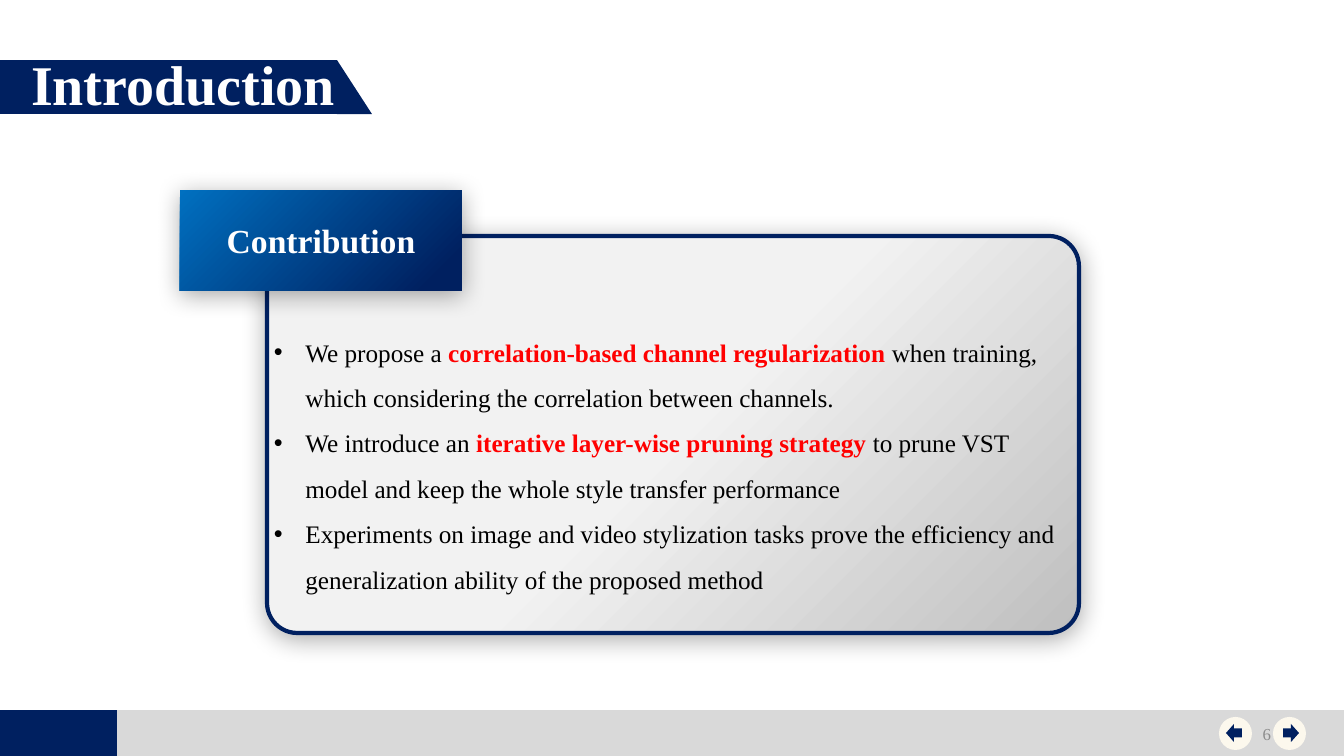
import pptx
import pptx.util
import pptx.dml.color
import pptx.enum.shapes
import pptx.enum.text
import pptx.oxml
import pptx.oxml.ns

COLORS = {"navy": "002060", "blue": "0070C0", "gray": "D9D9D9",
          "light": "F2F2F2", "dark": "BFBFBF", "cream": "FCF8ED",
          "red": "FF0000", "black": "000000", "white": "FFFFFF",
          "number": "8C8C8C"}
FONT = "Times New Roman"
TITLE = "Introduction"
LABEL = "Contribution"
NUMBER = "6"
# Each point is: lead, highlight, rest
POINTS = [
    ("We propose a ", "correlation-based channel regularization ",
     "when training, which considering the correlation between channels."),
    ("We introduce an ", "iterative layer-wise pruning strategy ",
     "to prune VST model and keep the whole style transfer performance"),
    ("Experiments on image and video stylization tasks prove the efficiency "
     "and generalization ability of the proposed method", "", ""),
]

WIDE, HIGH = 1344, 756
PX = 914400 / 100.8
SHAPE = pptx.enum.shapes.MSO_SHAPE
ALIGN = pptx.enum.text.PP_ALIGN
ANCHOR = pptx.enum.text.MSO_ANCHOR

FOOT = [(0, 710, WIDE, 46, "gray"), (0, 710, 117, 46, "navy")]
BAND = (0, 60, 337, 54)
TIP = 35
# Button left, arrow left, arrow shape
BUTTONS = [(1273, 1283, SHAPE.RIGHT_ARROW), (1219, 1226, SHAPE.LEFT_ARROW)]

deck = pptx.Presentation()
deck.slide_width, deck.slide_height = round(WIDE * PX), round(HIGH * PX)
slide = deck.slides.add_slide(deck.slide_layouts[5])


def scale(*box):
    return [round(n * PX) for n in box]


def rgb(name):
    return pptx.dml.color.RGBColor.from_string(COLORS[name])


def draw(kind, box, fill=None):
    shape = slide.shapes.add_shape(kind, *scale(*box))
    shape.shadow.inherit = False
    shape.line.fill.background()
    if fill:
        shape.fill.solid()
        shape.fill.fore_color.rgb = rgb(fill)
    return shape


def blend(shape, *stops):
    """Fill with a diagonal gradient and cast a soft shadow."""
    shape.fill.gradient()
    shape.fill.gradient_angle = 315
    for stop, (place, name) in zip(shape.fill.gradient_stops, stops):
        stop.position = place
        stop.color.rgb = rgb(name)
    effects = shape._element.spPr.find(pptx.oxml.ns.qn("a:effectLst"))
    effects.append(pptx.oxml.parse_xml(
        f'<a:outerShdw {pptx.oxml.ns.nsdecls("a")} blurRad="226000" '
        'dist="38100" dir="5220000" algn="ctr" rotWithShape="0">'
        f'<a:srgbClr val="{COLORS["black"]}"><a:alpha val="33000"/>'
        '</a:srgbClr></a:outerShdw>'))


def write(para, text, size, color, bold=False):
    run = para.add_run()
    run.text = text
    run.font.name = FONT
    run.font.size = pptx.util.Pt(size)
    run.font.bold = bold
    run.font.color.rgb = rgb(color)


def bullet(para):
    props = para._p.get_or_add_pPr()
    props.set("marL", "285750")
    props.set("indent", "-285750")
    for tag in ('buFont typeface="Arial"', 'buChar char="•"'):
        props.append(pptx.oxml.parse_xml(
            f'<a:{tag} {pptx.oxml.ns.nsdecls("a")}/>'))


def setup(shape, anchor, align):
    frame = shape.text_frame
    frame.word_wrap = True
    frame.auto_size = pptx.enum.text.MSO_AUTO_SIZE.NONE
    frame.vertical_anchor = anchor
    frame.paragraphs[0].alignment = align
    return frame


# Footer and title band
for *box, fill in FOOT:
    draw(SHAPE.RECTANGLE, box, fill)
draw(SHAPE.RECTANGLE, BAND, "navy")
draw(SHAPE.RIGHT_TRIANGLE, (BAND[2], BAND[1], TIP, BAND[3]), "navy")

title = slide.shapes.title
title.left, title.top, title.width, title.height = scale(21, 44, 372, 78)
slide.shapes._spTree.append(title._element)
frame = setup(title, ANCHOR.TOP, ALIGN.LEFT)
write(frame.paragraphs[0], TITLE, 40, "white", True)

# Page buttons
for left, inner, arrow in BUTTONS:
    draw(SHAPE.OVAL, (left, 717, 33, 33), "cream")
    draw(arrow, (inner, 724, 16, 18), "navy")

# Panel with the points
panel = draw(SHAPE.ROUNDED_RECTANGLE, (267, 236, 812, 397))
panel.adjustments[0] = 0.076
panel.line.color.rgb = rgb("navy")
panel.line.width = pptx.util.Pt(3)
blend(panel, (0.5, "light"), (1, "dark"))

body = slide.shapes.add_textbox(*scale(264, 317, 820, 279))
frame = setup(body, ANCHOR.TOP, ALIGN.LEFT)
for i, (lead, strong, rest) in enumerate(POINTS):
    para = frame.add_paragraph() if i else frame.paragraphs[0]
    para.line_spacing = 1.5
    bullet(para)
    write(para, lead, 18, "black")
    if strong:
        write(para, strong, 18, "red", True)
        write(para, rest, 18, "black")

label = draw(SHAPE.RECTANGLE, (180, 190, 282, 101))
blend(label, (0, "blue"), (0.9, "navy"))
frame = setup(label, ANCHOR.MIDDLE, ALIGN.CENTER)
write(frame.paragraphs[0], LABEL, 24, "white", True)

# Page number
page = slide.shapes.add_textbox(*scale(979, 714, 302, 40))
frame = setup(page, ANCHOR.MIDDLE, ALIGN.RIGHT)
write(frame.paragraphs[0], NUMBER, 12, "number")

deck.save("out.pptx")
